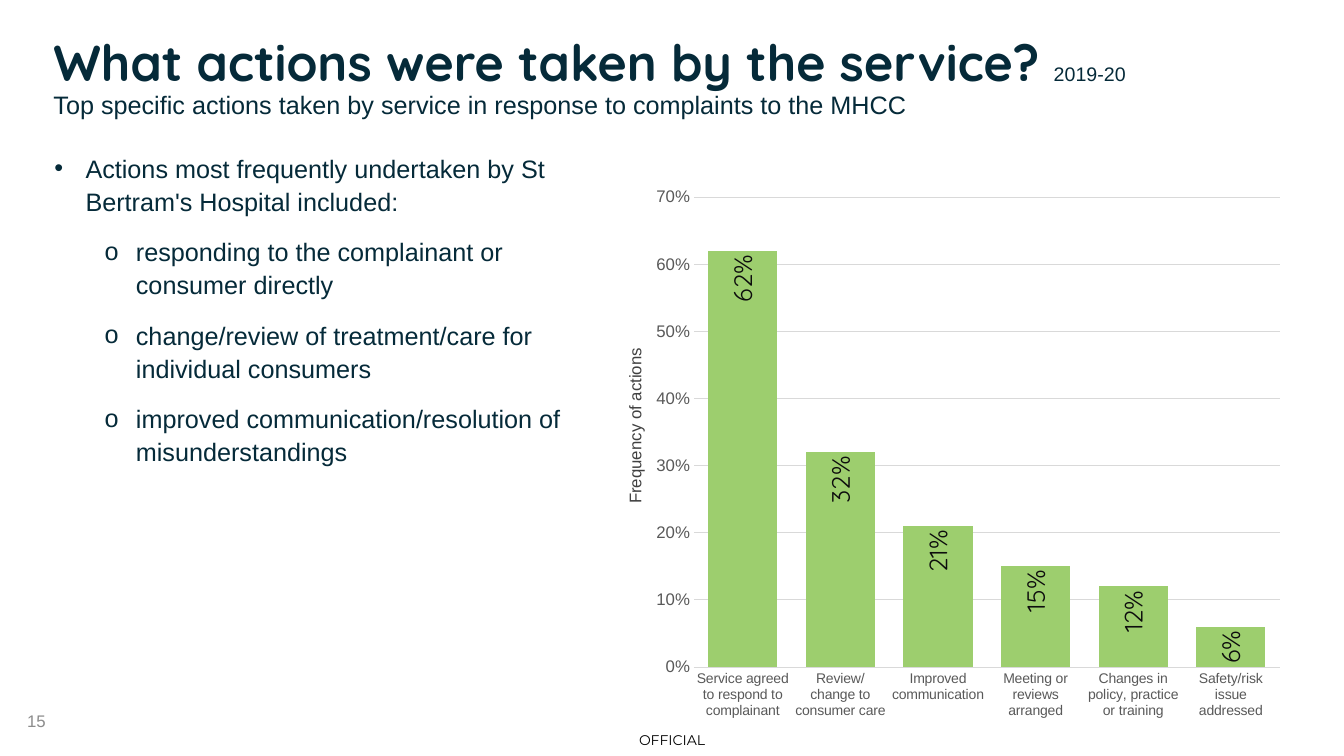
import dataclasses

import lxml.etree
import pptx
import pptx.chart.data
import pptx.dml.color
import pptx.enum.chart
import pptx.enum.text
import pptx.oxml
import pptx.oxml.ns
import pptx.util

Inches = pptx.util.Inches
Pt = pptx.util.Pt
Align = pptx.enum.text.PP_ALIGN
Anchor = pptx.enum.text.MSO_ANCHOR


@dataclasses.dataclass(frozen=True)
class Theme:
    """Colours, fonts and type sizes of the deck."""
    navy: str = "052A39"
    green: str = "9DCE6E"
    black: str = "000000"
    label: str = "0D0D0D"
    axis_title: str = "404040"
    axis_text: str = "595959"
    number: str = "8C8C8C"
    grid: str = "D9D9D9"
    body_font: str = "Arial"
    title_font: str = "Quicksand"
    mark_font: str = "Montserrat"
    title: int = 36
    body: int = 18
    year: int = 14
    small: int = 12
    tiny: int = 10


THEME = Theme()
ACTIONS = {
    "Service agreed to respond to complainant": 0.62,
    "Review/change to consumer care": 0.32,
    "Improved communication": 0.21,
    "Meeting or reviews arranged": 0.15,
    "Changes in policy, practice or training": 0.12,
    "Safety/risk issue addressed": 0.06,
}
INTRODUCTION = "Actions most frequently undertaken by St Bertram's Hospital included:"
EXAMPLES = [
    "responding to the complainant or consumer directly",
    "change/review of treatment/care for individual consumers",
    "improved communication/resolution of misunderstandings",
]


def style_font(font, size, color, name=THEME.body_font, bold=False):
    """Apply one type style to a font."""
    font.size, font.name, font.bold = Pt(size), name, bold
    font.color.rgb = pptx.dml.color.RGBColor.from_string(color)


def write(para, text, size=THEME.body, color=THEME.navy, name=THEME.body_font,
          bold=False, align=Align.LEFT):
    """Add formatted text to a paragraph."""
    para.alignment = align
    span = para.add_run()
    span.text = text
    style_font(span.font, size, color, name, bold)


def place(shape, box):
    """Move a shape to a box of left, top, width and height in inches."""
    shape.left, shape.top, shape.width, shape.height = map(Inches, box)


def add_text_box(page, box, anchor=Anchor.TOP, margin=None):
    """Add a wrapping text box."""
    shape = page.shapes.add_textbox(*map(Inches, box))
    frame = shape.text_frame
    frame.word_wrap = True
    frame.vertical_anchor = anchor
    if margin is not None:
        frame.margin_left = frame.margin_right = Inches(margin)
        frame.margin_top = frame.margin_bottom = Inches(margin)
    return shape


def add_bullet(para, mark, indent):
    """Give a paragraph a hanging bullet."""
    properties = para._p.get_or_add_pPr()
    properties.set("marL", str(Inches(indent)))
    properties.set("indent", str(-Inches(0.31)))
    tag = pptx.oxml.ns.qn
    color = lxml.etree.SubElement(properties, tag("a:buClr"))
    lxml.etree.SubElement(color, tag("a:srgbClr"), val=THEME.navy)
    lxml.etree.SubElement(properties, tag("a:buFont"), typeface=THEME.body_font)
    lxml.etree.SubElement(properties, tag("a:buChar"), char=mark)


def build_heading(page, box):
    """Fill the title placeholder with the title, year and subtitle."""
    heading = page.shapes.title
    place(heading, box)
    frame = heading.text_frame
    frame.word_wrap = True
    frame.auto_size = pptx.enum.text.MSO_AUTO_SIZE.NONE
    frame.vertical_anchor = Anchor.TOP
    title, subtitle = frame.paragraphs[0], frame.add_paragraph()
    for para in (title, subtitle):
        para.line_spacing = 0.9
        para.space_before = Pt(0)
    write(title, "What actions were taken by the service? ", size=THEME.title,
          name=THEME.title_font, bold=True)
    write(title, "2019-20", size=THEME.year)
    write(subtitle, "Top specific actions taken by service in response to complaints to the MHCC")


def build_list(page, box):
    """Write the introduction and its indented examples."""
    frame = add_text_box(page, box).text_frame
    for index, text in enumerate([INTRODUCTION, *EXAMPLES]):
        para = frame.add_paragraph() if index else frame.paragraphs[0]
        para.level = 1 if index else 0
        para.line_spacing = 1.1
        para.space_before = Pt(6 if index else 0)
        para.space_after = Pt(6)
        add_bullet(para, "o" if index else "•", 0.81 if index else 0.31)
        write(para, text)


def set_plot_layout(chart, x, y, w, h):
    """Fix the inner plot area as fractions of the chart."""
    area = chart._chartSpace.chart.plotArea
    for old in area.findall(pptx.oxml.ns.qn("c:layout")):
        area.remove(old)
    sizes = "".join(f'<c:{key} val="{value}"/>' for key, value in dict(x=x, y=y, w=w, h=h).items())
    area.insert(0, pptx.oxml.parse_xml(
        f'<c:layout {pptx.oxml.ns.nsdecls("c")}><c:manualLayout><c:layoutTarget val="inner"/>'
        f'<c:xMode val="edge"/><c:yMode val="edge"/>{sizes}</c:manualLayout></c:layout>'))


def style_line(line, color):
    """Draw a thin chart line."""
    line.width = Pt(0.75)
    line.color.rgb = pptx.dml.color.RGBColor.from_string(color)


def build_chart(page, box):
    """Draw the action frequencies as columns with a turned axis title."""
    left, top, width, height = box
    data = pptx.chart.data.CategoryChartData(number_format="0%")
    data.categories = list(ACTIONS)
    data.add_series("Series 1", list(ACTIONS.values()))
    kinds = pptx.enum.chart
    chart = page.shapes.add_chart(kinds.XL_CHART_TYPE.COLUMN_CLUSTERED,
                                  *map(Inches, box), data).chart
    chart.has_legend = chart.has_title = False
    style_font(chart.font, THEME.tiny, THEME.black)
    set_plot_layout(chart, 0.058, 0.183, 0.911, 0.725)

    for axis, size in ((chart.category_axis, THEME.tiny), (chart.value_axis, THEME.small)):
        axis.major_tick_mark = axis.minor_tick_mark = kinds.XL_TICK_MARK.NONE
        style_font(axis.tick_labels.font, size, THEME.axis_text)
    style_line(chart.category_axis.format.line, THEME.grid)
    values = chart.value_axis
    values.minimum_scale, values.maximum_scale, values.major_unit = 0, 0.7, 0.1
    values.tick_labels.number_format = "0%"
    values.tick_labels.number_format_is_linked = False
    values.format.line.fill.background()
    style_line(values.major_gridlines.format.line, THEME.grid)

    plot = chart.plots[0]
    plot.gap_width = 41
    plot.vary_by_categories = False
    fill = plot.series[0].format.fill
    fill.solid()
    fill.fore_color.rgb = pptx.dml.color.RGBColor.from_string(THEME.green)
    labels = plot.series[0].data_labels
    labels.show_value = True
    labels.position = kinds.XL_LABEL_POSITION.INSIDE_END
    labels.number_format, labels.number_format_is_linked = "0%", False
    style_font(labels.font, THEME.body, THEME.label, THEME.title_font)
    turn = labels._element.find(".//" + pptx.oxml.ns.qn("a:bodyPr"))
    turn.set("rot", "-5400000")
    turn.set("vert", "horz")

    caption = add_text_box(page, (left - 1.39, top + 3.23, 2.35, 0.43), Anchor.MIDDLE)
    caption.rotation = 270
    write(caption.text_frame.paragraphs[0], "Frequency of actions", size=THEME.small,
          color=THEME.axis_title, align=Align.CENTER)


def build_footer(page, box):
    """Write the slide number and the centred marking."""
    left, top, width, height = box
    number = add_text_box(page, (left + 0.17, top, 3, 0.4), Anchor.MIDDLE)
    write(number.text_frame.paragraphs[0], "15", size=THEME.small, color=THEME.number)
    mark = add_text_box(page, (left + (width - 1.02) / 2, top + 0.24, 1.02, 0.31),
                        Anchor.MIDDLE, margin=0)
    write(mark.text_frame.paragraphs[0], "OFFICIAL", size=THEME.tiny, color=THEME.black,
          name=THEME.mark_font, align=Align.CENTER)


def main():
    """Build and save the deck."""
    deck = pptx.Presentation()
    deck.slide_width, deck.slide_height = Inches(13.33), Inches(7.5)
    page = deck.slides.add_slide(deck.slide_layouts.get_by_name("Title Only"))
    build_footer(page, (0, 6.95, 13.33, 0.55))
    build_list(page, (0.44, 1.44, 5.64, 3.25))
    build_chart(page, (6.51, 0.78, 6.38, 6.43))
    build_heading(page, (0.43, 0.33, 12.48, 0.93))
    deck.save("out.pptx")


if __name__ == "__main__":
    main()
